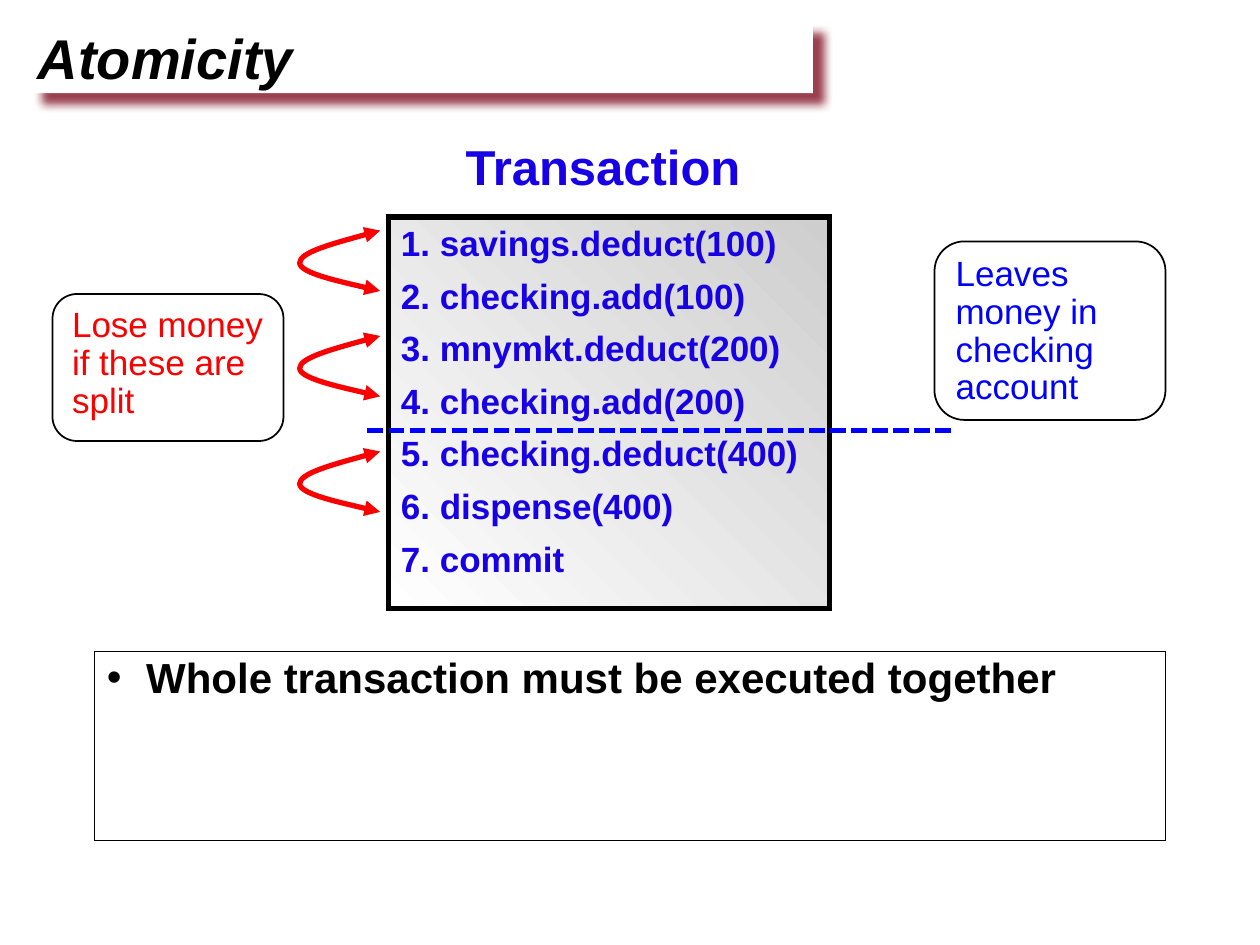
"""Build the Atomicity slide: a transaction, its paired steps and two callouts."""
from dataclasses import dataclass, field
from typing import Any

import pptx
import pptx.dml.color
import pptx.enum.dml
import pptx.enum.shapes
import pptx.enum.text
import pptx.oxml.ns
import pptx.util
from lxml import etree

Pt = pptx.util.Pt
qn = pptx.oxml.ns.qn
SHAPE = pptx.enum.shapes.MSO_SHAPE
COLORS = {
    "white": "FFFFFF", "black": "000000", "grey": "CECECE", "maroon": "790015",
    "indigo": "1700E5", "blue": "0000FF", "red": "FA0000",
}
STEPS = [
    "1. savings.deduct(100)", "2. checking.add(100)", "3. mnymkt.deduct(200)",
    "4. checking.add(200)", "5. checking.deduct(400)", "6. dispense(400)", "7. commit",
]
CURVE_TOPS = [131.75, 192, 258]
CURVE_POINTS = [(46, 0), (23, 6.25), (0, 12.5), (0, 18.5), (0, 24.5), (46, 34.5), (46, 34.5)]


@dataclass
class Box:
    """A shape with text; lengths are in points."""
    at: tuple[float, float, float, float]
    lines: list[str]
    size: float
    color: str
    geometry: Any = SHAPE.RECTANGLE
    fill: str | None = None
    line: float | None = None
    insets: tuple[float, float, float, float] = (7.2, 3.6, 7.2, 3.6)
    wrap: bool = True
    bullet: str | None = None
    font: dict[str, Any] = field(default_factory=dict)
    para: dict[str, Any] = field(default_factory=dict)


def rgb(name: str) -> pptx.dml.color.RGBColor:
    """Look up a named colour."""
    return pptx.dml.color.RGBColor.from_string(COLORS[name])


def assign(target: Any, values: dict[str, Any]) -> None:
    """Set several attributes on one object."""
    for name, value in values.items():
        setattr(target, name, value)


def add_bullet(p: Any, char: str, hang: float) -> None:
    """Give a paragraph a hanging bullet."""
    pPr = p._p.get_or_add_pPr()
    pPr.set("marL", str(Pt(hang)))
    pPr.set("indent", str(-Pt(hang)))
    etree.SubElement(pPr, qn("a:buFont"), typeface="Arial")
    etree.SubElement(pPr, qn("a:buChar"), char=char)


def add_box(slide: Any, box: Box) -> Any:
    """Draw one box and its paragraphs."""
    s = slide.shapes.add_shape(box.geometry, *map(Pt, box.at))
    s.shadow.inherit = False
    if box.fill:
        s.fill.solid()
        s.fill.fore_color.rgb = rgb(box.fill)
    else:
        s.fill.background()
    if box.line:
        s.line.color.rgb = rgb("black")
        s.line.width = Pt(box.line)
        etree.SubElement(s._element.spPr.find(qn("a:ln")), qn("a:miter"), lim="800000")
    else:
        s.line.fill.background()
    tf = s.text_frame
    sides = ("margin_left", "margin_top", "margin_right", "margin_bottom")
    assign(tf, dict(zip(sides, map(Pt, box.insets))))
    assign(tf, {"word_wrap": box.wrap, "vertical_anchor": pptx.enum.text.MSO_ANCHOR.TOP})
    for i, text in enumerate(box.lines):
        p = tf.paragraphs[0] if i == 0 else tf.add_paragraph()
        p.alignment = pptx.enum.text.PP_ALIGN.LEFT
        if i:
            p.space_before = Pt(6)
        assign(p, box.para)
        if box.bullet:
            add_bullet(p, box.bullet, 22.5)
        r = p.add_run()
        r.text = text
        assign(r.font, {"name": "Arial", "size": Pt(box.size), **box.font})
        r.font.color.rgb = rgb(box.color)
    return s


def add_title_shadow(s: Any) -> None:
    """Cast a soft maroon shadow to the lower right."""
    effects = s._element.spPr.find(qn("a:effectLst"))
    shadow = etree.SubElement(
        effects, qn("a:outerShdw"), blurRad=str(Pt(5)), dist=str(Pt(8.5)),
        dir="2700000", algn="ctr", rotWithShape="0")
    color = etree.SubElement(shadow, qn("a:srgbClr"), val=COLORS["maroon"])
    etree.SubElement(color, qn("a:alpha"), val="75000")


def add_gradient(s: Any, start: str, end: str, angle: float) -> None:
    """Fill a shape with a two-stop linear gradient."""
    s.fill.gradient()
    s.fill.gradient_angle = angle
    for stop, name, position in zip(s.fill.gradient_stops, (start, end), (0, 1)):
        stop.position = position
        stop.color.rgb = rgb(name)


def add_curve(slide: Any, left: float, top: float) -> None:
    """Draw a double-headed curved arrow joining two steps."""
    points = [(Pt(left + x), Pt(top + y)) for x, y in CURVE_POINTS]
    builder = slide.shapes.build_freeform(*points[0])
    builder.add_line_segments(points[1:], close=False)
    s = builder.convert_to_shape()
    segments = list(s._element.iter(qn("a:lnTo")))
    for i in range(0, len(segments), 3):
        curve = etree.SubElement(segments[i].getparent(), qn("a:cubicBezTo"))
        for segment in segments[i:i + 3]:
            curve.append(segment[0])
            segment.getparent().remove(segment)
    s.shadow.inherit = False
    s.fill.background()
    s.line.color.rgb = rgb("red")
    s.line.width = Pt(3)
    ln = s._element.spPr.find(qn("a:ln"))
    for end in ("a:headEnd", "a:tailEnd"):
        etree.SubElement(ln, qn(end), type="triangle")


def add_divider(slide: Any, x1: float, x2: float, y: float) -> None:
    """Draw the dashed line across the transaction."""
    kind = pptx.enum.shapes.MSO_CONNECTOR.STRAIGHT
    s = slide.shapes.add_connector(kind, Pt(x1), Pt(y), Pt(x2), Pt(y))
    s.line.color.rgb = rgb("blue")
    assign(s.line, {"width": Pt(3), "dash_style": pptx.enum.dml.MSO_LINE.SQUARE_DOT})
    etree.SubElement(s._element.spPr, qn("a:effectLst"))


def main() -> None:
    """Assemble and save the slide."""
    prs = pptx.Presentation()
    assign(prs, {"slide_width": Pt(720), "slide_height": Pt(540)})
    slide = prs.slides.add_slide(prs.slide_layouts[6])
    bold, tight = {"bold": True}, {"line_spacing": 0.9}
    callout = {"geometry": SHAPE.ROUNDED_RECTANGLE, "fill": "white", "line": 1, "para": tight}

    title = add_box(slide, Box(
        (18, 12.25, 446.5, 41), ["Atomicity"], 32, "black", fill="white",
        insets=(3.6, 1.44, 3.6, 1.44), wrap=False, font={"bold": True, "italic": True}))
    add_title_shadow(title)
    add_box(slide, Box(
        (54, 372, 612, 108), ["Whole transaction must be executed together"], 24,
        "black", line=0.25, bullet="•", font=bold, para=tight))
    steps = add_box(slide, Box(
        (222, 124, 252, 224), STEPS, 20, "indigo", line=3,
        insets=(7.2, 2.8, 7.2, 3.6), font=bold))
    add_gradient(steps, "white", "grey", 45)
    add_box(slide, Box(
        (259, 78, 175, 38), ["Transaction"], 28, "indigo", wrap=False,
        font=bold, para=tight))
    for top in CURVE_TOPS:
        add_curve(slide, 171.25, top)
    add_box(slide, Box(
        (30, 168, 132, 84), ["Lose money if these are split"], 20, "red", **callout))
    add_divider(slide, 210, 546, 246)
    add_box(slide, Box(
        (534, 138, 132, 102), ["Leaves money in checking account"], 20, "blue", **callout))
    prs.save("out.pptx")


if __name__ == "__main__":
    main()
